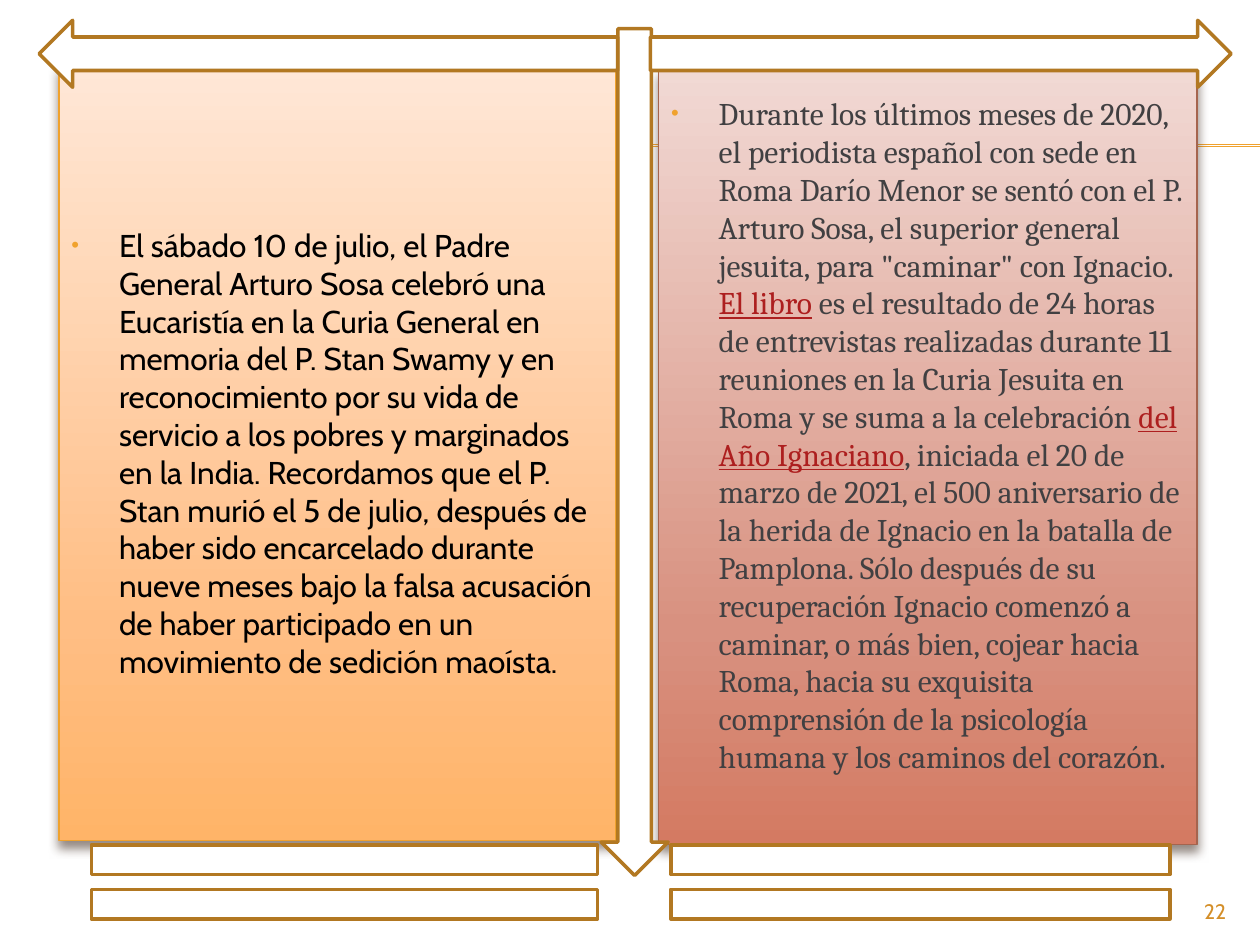
import copy

import pptx
import pptx.dml.color
import pptx.enum.shapes
import pptx.enum.text
import pptx.oxml
import pptx.oxml.ns
import pptx.util
from lxml import etree

Cm = pptx.util.Cm
Pt = pptx.util.Pt
SHAPE = pptx.enum.shapes.MSO_SHAPE
qn = pptx.oxml.ns.qn

COLORS = {
    "white": "FFFFFF", "black": "000000", "text": "414042", "link": "AD1F1F",
    "amber": "F0A22E", "outline": "B27822", "number": "D48F29",
    "brick": "A5644E", "shadow": "4E3B30",
}
PEACH_STOPS = [(0, "FFE7D7"), (0.72, "FFBE84"), (1, "FFB468")]
BRICK_STOPS = [(0, "F1D9D4"), (0.72, "D89180"), (1, "D47A62")]

# Each run is (text, colour key, underlined)
MEMORIAL = [
    ("El sábado 10 de julio, el Padre General Arturo Sosa celebró una Eucaristía "
     "en la Curia General en memoria del P. Stan Swamy y en reconocimiento por su "
     "vida de servicio a los pobres y marginados en la India. Recordamos que el P. "
     "Stan murió el 5 de julio, después de haber sido encarcelado durante nueve "
     "meses bajo la falsa acusación de haber participado en un movimiento de "
     "sedición maoísta.", "black", False),
]
BOOK = [
    ("Durante los últimos meses de 2020, el periodista español con sede en Roma "
     "Darío Menor se sentó con el P. Arturo Sosa, el superior general jesuita, "
     "para \"caminar\" con Ignacio. ", "text", False),
    ("El libro", "link", True),
    (" es el resultado de 24 horas de entrevistas realizadas durante 11 reuniones "
     "en la Curia Jesuita en Roma y se suma a la celebración ", "text", False),
    ("del Año Ignaciano", "link", True),
    (", iniciada el 20 de marzo de 2021, el 500 aniversario de la herida de Ignacio "
     "en la batalla de Pamplona. Sólo después de su recuperación Ignacio comenzó a "
     "caminar, o más bien, cojear hacia Roma, hacia su exquisita comprensión de la "
     "psicología humana y los caminos del corazón.", "text", False),
]


def rgb(value):
    return pptx.dml.color.RGBColor.from_string(value)


def add_outlined(slide, kind, left, top, width, height):
    """White shape with the brown outline."""
    shape = slide.shapes.add_shape(kind, Cm(left), Cm(top), Cm(width), Cm(height))
    shape.shadow.inherit = False
    shape.fill.solid()
    shape.fill.fore_color.rgb = rgb(COLORS["white"])
    shape.line.color.rgb = rgb(COLORS["outline"])
    shape.line.width = Pt(2)
    return shape


def fill_gradient(shape, stops):
    shape.fill.gradient()
    shape.fill.gradient_angle = 270
    stop_list = next(shape._element.spPr.iter(qn("a:gsLst")))
    while len(stop_list) < len(stops):
        stop_list.append(copy.deepcopy(stop_list[-1]))
    for stop, (position, color) in zip(shape.fill.gradient_stops, stops):
        stop.position = position
        stop.color.rgb = rgb(color)


def add_soft_shadow(shape):
    shape.shadow.inherit = False
    effects = shape._element.spPr.find(qn("a:effectLst"))
    shadow = etree.SubElement(effects, qn("a:outerShdw"), blurRad=str(Pt(6)),
                              dist=str(Pt(4)), dir="5400000", rotWithShape="0")
    color = etree.SubElement(shadow, qn("a:srgbClr"), val=COLORS["shadow"])
    etree.SubElement(color, qn("a:alpha"), val="60000")


def add_bullet(paragraph):
    properties = paragraph._p.get_or_add_pPr()
    properties.set("marL", str(Cm(0.96)))
    properties.set("indent", str(-Cm(0.96)))
    color = etree.SubElement(properties, qn("a:buClr"))
    etree.SubElement(color, qn("a:srgbClr"), val=COLORS["amber"])
    etree.SubElement(properties, qn("a:buSzPct"), val="70000")
    etree.SubElement(properties, qn("a:buFont"), typeface="Arial")
    etree.SubElement(properties, qn("a:buChar"), char="•")


def add_panel(slide, box, stops, border, font, runs, bottom_inset):
    left, top, width, height = box
    panel = slide.shapes.add_shape(SHAPE.RECTANGLE, Cm(left), Cm(top),
                                   Cm(width), Cm(height))
    fill_gradient(panel, stops)
    panel.line.color.rgb = rgb(COLORS[border])
    panel.line.width = Pt(0.79)
    add_soft_shadow(panel)

    frame = panel.text_frame
    frame.word_wrap = True
    frame.vertical_anchor = pptx.enum.text.MSO_ANCHOR.MIDDLE
    frame.margin_bottom = Cm(bottom_inset)
    paragraph = frame.paragraphs[0]
    paragraph.alignment = pptx.enum.text.PP_ALIGN.LEFT
    add_bullet(paragraph)
    for text, color, underlined in runs:
        run = paragraph.add_run()
        run.text = text
        run.font.name = font
        run.font.size = Pt(18)
        run.font.color.rgb = rgb(COLORS[color])
        if underlined:
            run.font.underline = True


def add_header_rules(slide, box):
    """Thin double rule behind the panels."""
    left, top, width, gap = box
    for y in (top, top + gap):
        rule = slide.shapes.add_connector(
            pptx.enum.shapes.MSO_CONNECTOR.STRAIGHT,
            Cm(left), Cm(y), Cm(left + width), Cm(y))
        rule.line.color.rgb = rgb(COLORS["amber"])
        rule.line.width = Pt(0.75)
        etree.SubElement(rule._element.spPr, qn("a:effectLst"))


def add_arrow_frame(slide, box):
    """Central down arrow with one arrow to each side along the top."""
    left, top, width, height = box
    thick = 1.35
    add_outlined(slide, SHAPE.DOWN_ARROW, left + 11.33, top + 0.17, thick, height - 0.17)
    add_outlined(slide, SHAPE.RIGHT_ARROW, left + 12.32, top, width - 12.32, thick)
    add_outlined(slide, SHAPE.LEFT_ARROW, left, top, 11.66, thick)


def add_footer_bars(slide, box):
    """Two overlapping equal signs, one under each panel."""
    left, top, width, height = box
    right_start = 11.71
    add_outlined(slide, SHAPE.MATH_EQUAL, left, top, 13.89, height)
    add_outlined(slide, SHAPE.MATH_EQUAL, left + right_start, top,
                 width - right_start, height)


def add_slide_number(slide, box, number):
    left, top, width, height = box
    number_box = slide.shapes.add_textbox(Cm(left), Cm(top), Cm(width), Cm(height))
    number_box.text_frame.word_wrap = True
    paragraph = number_box.text_frame.paragraphs[0]
    paragraph.alignment = pptx.enum.text.PP_ALIGN.RIGHT
    run = paragraph.add_run()
    run.text = number
    run.font.name = "Cabin"
    run.font.size = Pt(12)
    run.font.color.rgb = rgb(COLORS["number"])


def main():
    deck = pptx.Presentation()
    deck.slide_width, deck.slide_height = Cm(25.4), Cm(19.05)
    slide = deck.slides.add_slide(deck.slide_layouts[6])

    add_header_rules(slide, (1.42, 2.92, 23.98, 0.03))
    # Two text panels
    add_panel(slide, (1.19, 1.32, 11.23, 15.62), PEACH_STOPS, "amber",
              "Cabin", MEMORIAL, 0.13)
    add_panel(slide, (13.28, 1.4, 10.85, 15.62), BRICK_STOPS, "brick",
              "Cambria", BOOK, 1.02)
    # Ornaments around the panels
    add_arrow_frame(slide, (0.79, 0.41, 24.03, 17.24))
    add_footer_bars(slide, (0, 16.51, 25.4, 2.54))
    add_slide_number(slide, (22.86, 17.98, 2.11, 0.69), "22")

    deck.save("out.pptx")


if __name__ == "__main__":
    main()
